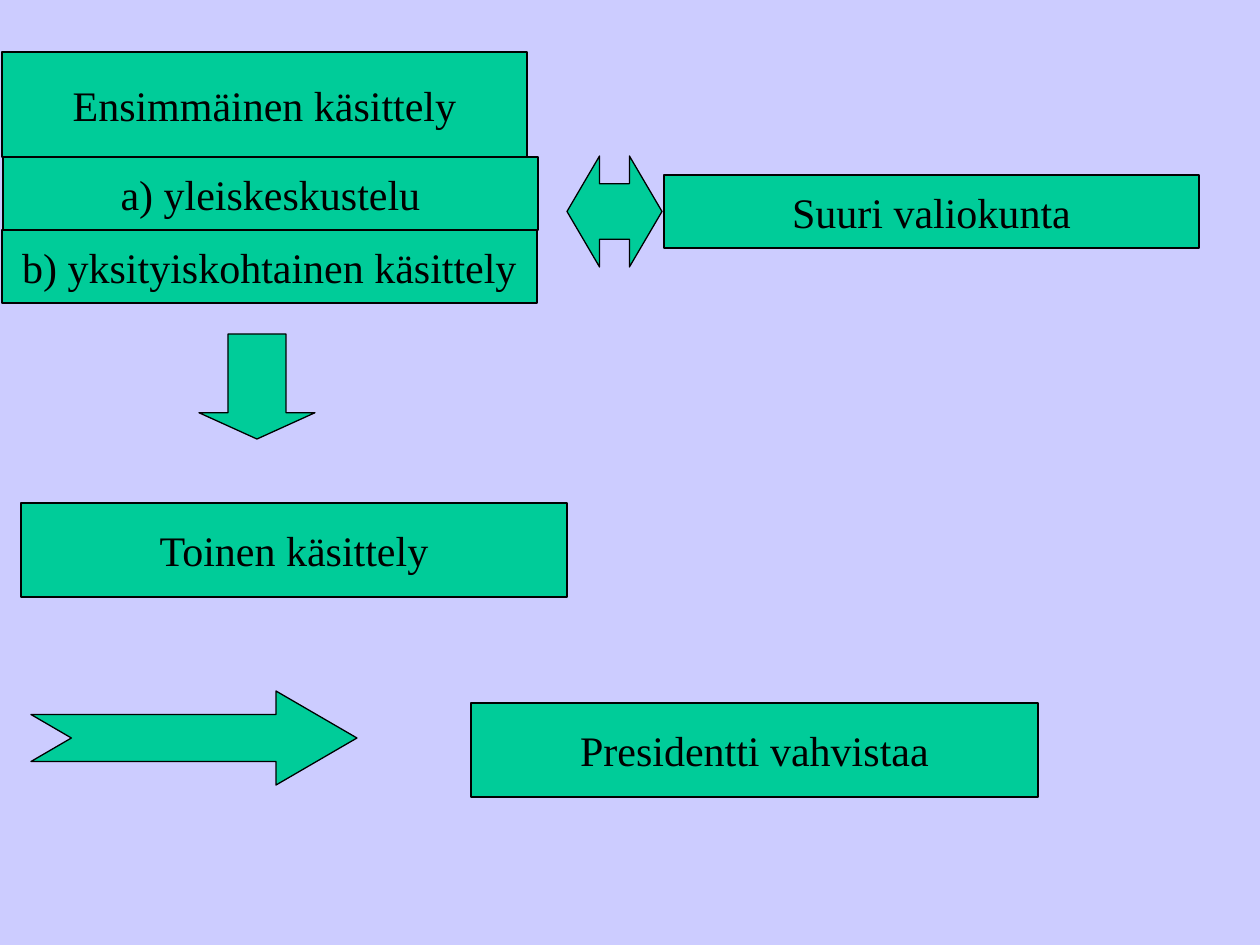
from pptx import Presentation
from pptx.dml.color import RGBColor
from pptx.enum.shapes import MSO_SHAPE as SHAPE
from pptx.enum.text import MSO_ANCHOR, PP_ALIGN
from pptx.util import Pt

PX = 914400 / 126  # EMU per px
LAVENDER = RGBColor(0xCC, 0xCC, 0xFF)
GREEN = RGBColor(0x00, 0xCC, 0x99)
BLACK = RGBColor(0, 0, 0)


def emu(px):
    return round(px * PX)


def add_figure(s, kind, box, adjustments=()):
    sp = s.shapes.add_shape(kind, *map(emu, box))
    sp.shadow.inherit = False
    sp.fill.solid()
    sp.fill.fore_color.rgb = GREEN
    sp.line.color.rgb = BLACK
    sp.line.width = Pt(0.75)
    for i, value in enumerate(adjustments):
        sp.adjustments[i] = value
    return sp


def add_stage(s, text, box):
    tf = add_figure(s, SHAPE.RECTANGLE, box).text_frame
    tf.word_wrap = False
    tf.vertical_anchor = MSO_ANCHOR.MIDDLE
    p = tf.paragraphs[0]
    p.text = text
    p.alignment = PP_ALIGN.CENTER
    p.font.name = "Times New Roman"
    p.font.size = Pt(24)
    p.font.color.rgb = BLACK


def first_reading(s, x, y):
    """Heading box with its two phases stacked below, and the arrow onward."""
    add_stage(s, "Ensimmäinen käsittely", (x, y, 525, 105))
    add_stage(s, "a) yleiskeskustelu", (x + 1, y + 105, 535, 73))
    add_stage(s, "b) yksityiskohtainen käsittely", (x, y + 178, 535, 73))
    add_figure(s, SHAPE.DOWN_ARROW, (x + 197, y + 282, 116, 105), (0.5, 0.25))


def grand_committee(s, x, y):
    """Two-way arrow leading to the committee box."""
    add_figure(s, SHAPE.LEFT_RIGHT_ARROW, (x, y, 95, 111), (0.5, 0.343))
    add_stage(s, "Suuri valiokunta", (x + 97, y + 19, 535, 73))


def second_reading(s, x, y):
    add_stage(s, "Toinen käsittely", (x, y, 546, 94))


def confirmation(s, x, y):
    """Notched arrow leading to the president's box."""
    add_figure(s, SHAPE.NOTCHED_RIGHT_ARROW, (x, y, 326, 94), (0.5, 0.861))
    add_stage(s, "Presidentti vahvistaa", (x + 440, y + 12, 567, 94))


def main():
    prs = Presentation()
    prs.slide_width, prs.slide_height = emu(1260), emu(945)
    s = prs.slides.add_slide(prs.slide_layouts[6])
    s.background.fill.solid()
    s.background.fill.fore_color.rgb = LAVENDER

    first_reading(s, 2, 52)
    grand_committee(s, 567, 156)
    second_reading(s, 21, 503)
    confirmation(s, 31, 691)
    prs.save("out.pptx")


if __name__ == "__main__":
    main()
